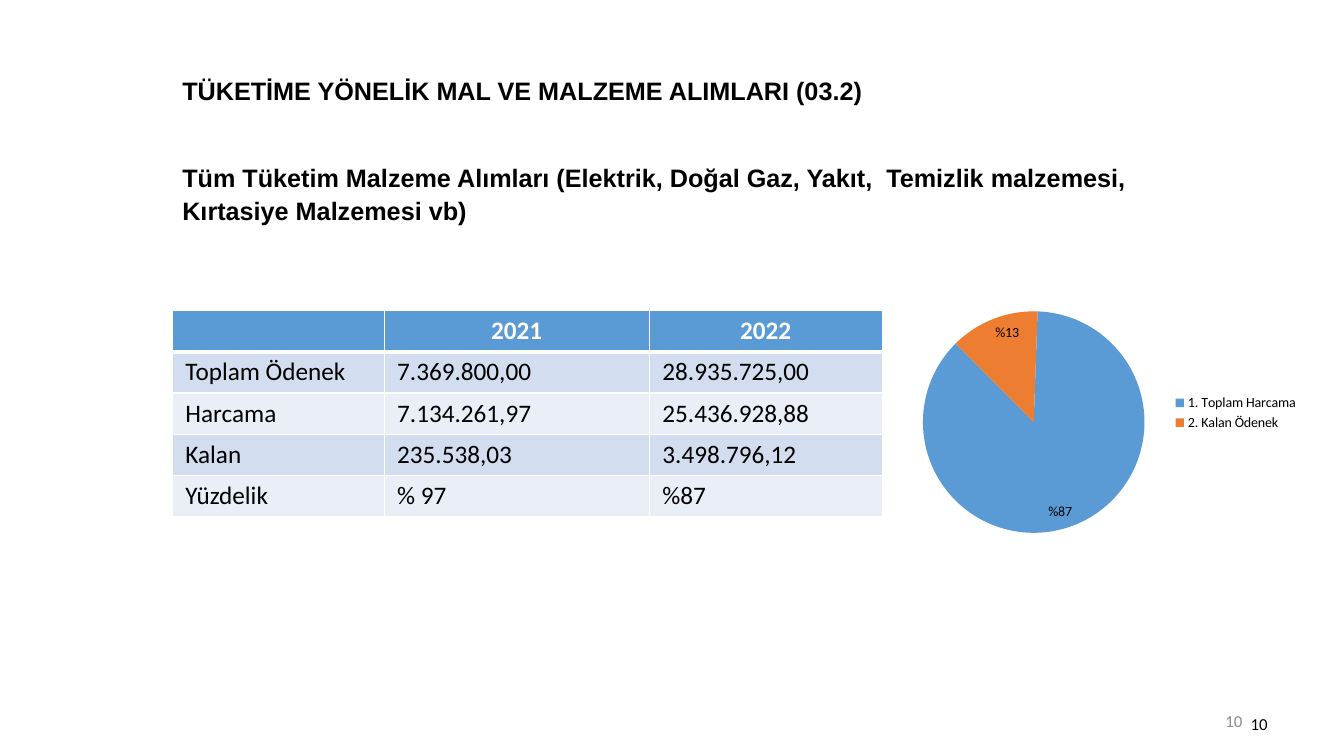
from lxml import etree
from pptx import Presentation
from pptx.chart.data import CategoryChartData
from pptx.dml.color import RGBColor
from pptx.enum.chart import XL_CHART_TYPE, XL_LABEL_POSITION, XL_LEGEND_POSITION
from pptx.enum.text import MSO_ANCHOR, PP_ALIGN
from pptx.oxml import parse_xml
from pptx.oxml.ns import nsdecls, qn
from pptx.util import Inches, Pt

PIE = XL_CHART_TYPE.PIE
INSIDE_END = XL_LABEL_POSITION.INSIDE_END
LEGEND_RIGHT = XL_LEGEND_POSITION.RIGHT
TOP, MIDDLE, BOTTOM = MSO_ANCHOR.TOP, MSO_ANCHOR.MIDDLE, MSO_ANCHOR.BOTTOM
LEFT, CENTER, RIGHT = PP_ALIGN.LEFT, PP_ALIGN.CENTER, PP_ALIGN.RIGHT

BLACK = RGBColor(0x00, 0x00, 0x00)
WHITE = RGBColor(0xFF, 0xFF, 0xFF)
GRAY = RGBColor(0x8C, 0x8C, 0x8C)
BLUE = RGBColor(0x5B, 0x9B, 0xD5)
ORANGE = RGBColor(0xED, 0x7D, 0x31)
BANDS = (RGBColor(0xD2, 0xDE, 0xEF), RGBColor(0xEA, 0xEF, 0xF7))

HEADINGS = (
    "TÜKETİME YÖNELİK MAL VE MALZEME ALIMLARI (03.2)",
    "Tüm Tüketim Malzeme Alımları (Elektrik, Doğal Gaz, Yakıt,  Temizlik malzemesi, "
    "Kırtasiye Malzemesi vb)",
)
BUDGET = (
    ("", "2021", "2022"),
    ("Toplam Ödenek", "7.369.800,00", "28.935.725,00"),
    ("Harcama", "7.134.261,97", "25.436.928,88"),
    ("Kalan", "235.538,03", "3.498.796,12"),
    ("Yüzdelik", "% 97", "%87"),
)
COLUMN_WIDTHS = (2.1, 2.63, 2.31)
ROW_HEIGHT = 0.41
SHARES = (("1. Toplam Harcama", 87, BLUE), ("2. Kalan Ödenek", 13, ORANGE))


def add_span(para, text, size, color, font="Calibri", bold=False):
    span = para.add_run()
    span.text = text
    span.font.name = font
    span.font.size = Pt(size)
    span.font.bold = bold
    span.font.color.rgb = color


def add_box(page, left, top, width, height, anchor):
    box = page.shapes.add_textbox(Inches(left), Inches(top), Inches(width), Inches(height))
    frame = box.text_frame
    frame.word_wrap = True
    frame.vertical_anchor = anchor
    return frame


def add_headings(page):
    frame = add_box(page, 1.71, 0.68, 9.99, 2.98, TOP)
    for index, text in enumerate(HEADINGS):
        para = frame.add_paragraph() if index else frame.paragraphs[0]
        para.line_spacing = 1.07
        para.space_before = Pt(39 if index else 0)
        add_span(para, text, 18, BLACK, "Arial", True)


def add_page_number(page, left, top, width, height, anchor, color):
    para = add_box(page, left, top, width, height, anchor).paragraphs[0]
    para.alignment = RIGHT
    add_span(para, "10", 12, color)


def set_borders(cell, bottom_width, top_width):
    """Draw white cell borders, placed ahead of the fill as the schema requires."""
    properties = cell._tc.get_or_add_tcPr()
    widths = (("lnL", 1), ("lnR", 1), ("lnT", top_width), ("lnB", bottom_width))
    for position, (side, width) in enumerate(widths):
        properties.insert(position, parse_xml(
            f'<a:{side} {nsdecls("a")} w="{Pt(width)}"><a:solidFill>'
            f'<a:srgbClr val="{WHITE}"/></a:solidFill></a:{side}>'))


def add_budget_table(page):
    table = page.shapes.add_table(
        len(BUDGET), len(COLUMN_WIDTHS), Inches(1.71), Inches(3.08),
        Inches(sum(COLUMN_WIDTHS)), Inches(ROW_HEIGHT * len(BUDGET))).table
    for column, width in zip(table.columns, COLUMN_WIDTHS):
        column.width = Inches(width)
    for row_index, values in enumerate(BUDGET):
        table.rows[row_index].height = Inches(ROW_HEIGHT)
        header = row_index == 0
        for column_index, value in enumerate(values):
            cell = table.cell(row_index, column_index)
            cell.margin_left = cell.margin_right = Inches(0.13)
            cell.margin_top = cell.margin_bottom = Inches(0.05)
            cell.fill.solid()
            cell.fill.fore_color.rgb = BLUE if header else BANDS[(row_index - 1) % 2]
            set_borders(cell, 3 if header else 1, 3 if row_index == 1 else 1)
            para = cell.text_frame.paragraphs[0]
            para.alignment = CENTER if header else LEFT
            if value:
                add_span(para, value, 18, WHITE if header else BLACK, bold=header)


def set_pie_layout(chart, **fractions):
    """Fix the plot area by fractions of the chart's width and height."""
    plot_area = chart._chartSpace.chart.plotArea
    for layout in plot_area.findall(qn("c:layout")):
        plot_area.remove(layout)
    layout = etree.Element(qn("c:layout"))
    manual = etree.SubElement(layout, qn("c:manualLayout"))
    settings = {"layoutTarget": "inner", "xMode": "edge", "yMode": "edge", **fractions}
    for name, value in settings.items():
        etree.SubElement(manual, qn(f"c:{name}")).set("val", str(value))
    plot_area.insert(0, layout)


def add_share_chart(page):
    data = CategoryChartData()
    data.categories = [name for name, _, _ in SHARES]
    data.add_series("Series 1", [value for _, value, _ in SHARES])
    chart = page.shapes.add_chart(
        PIE, Inches(8.91), Inches(2.77), Inches(4.07), Inches(2.65), data).chart
    chart.has_title = False
    chart.font.name = "Calibri"
    chart.font.size = Pt(10)
    chart.font.color.rgb = BLACK
    chart.has_legend = True
    chart.legend.position = LEGEND_RIGHT
    chart.legend.include_in_layout = False
    plot = chart.plots[0]
    plot.vary_by_categories = True
    for index, (_, _, color) in enumerate(SHARES):
        fill = plot.series[0].points[index].format.fill
        fill.solid()
        fill.fore_color.rgb = color
    plot.has_data_labels = True
    labels = plot.data_labels
    labels.show_value = True
    labels.show_percentage = False
    labels.number_format = '"%"0'
    labels.number_format_is_linked = False
    labels.position = INSIDE_END
    pie = chart._chartSpace.chart.plotArea.find(qn("c:pieChart"))
    angle = pie.find(qn("c:firstSliceAng"))
    if angle is None:
        angle = etree.SubElement(pie, qn("c:firstSliceAng"))
    angle.set("val", "2")
    set_pie_layout(chart, x=0.06, y=0.12, w=0.54, h=0.83)


def main():
    deck = Presentation()
    deck.slide_width = Inches(13.33)
    deck.slide_height = Inches(7.5)
    page = deck.slides.add_slide(deck.slide_layouts[6])
    add_page_number(page, 9.42, 6.95, 3, 0.4, MIDDLE, GRAY)
    add_page_number(page, 9.56, 6.83, 3.11, 0.5, BOTTOM, BLACK)
    add_headings(page)
    add_budget_table(page)
    add_share_chart(page)
    deck.save("out.pptx")


if __name__ == "__main__":
    main()
